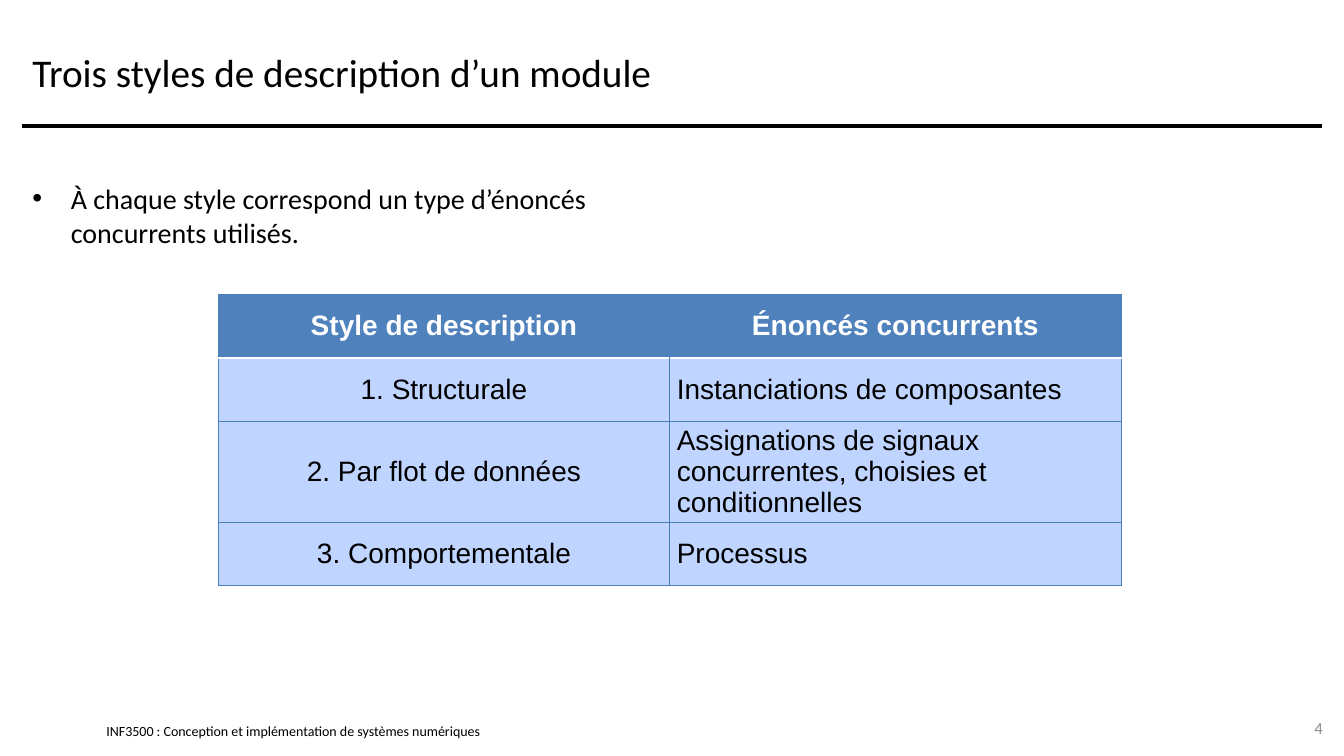
import dataclasses
import typing

import lxml.etree
import pptx
import pptx.dml.color
import pptx.enum.shapes
import pptx.enum.text
import pptx.oxml.ns
import pptx.slide
import pptx.table
import pptx.text.text
import pptx.util

ALIGN = pptx.enum.text.PP_ALIGN
MIDDLE = pptx.enum.text.MSO_ANCHOR.MIDDLE
TOP = pptx.enum.text.MSO_ANCHOR.TOP
WIDE = pptx.util.Inches(13.33)
HIGH = pptx.util.Inches(7.5)
PARTS = 12  # columns and rows of the slide grid


@dataclasses.dataclass(frozen=True)
class Theme:
    ink: str = "000000"
    paper: str = "FFFFFF"
    grey: str = "8C8C8C"
    head: str = "4F81BD"
    body: str = "BFD4FF"
    edge: str = "4B7EBC"
    text: str = "Calibri"
    grid: str = "Arial"
    large: int = 28
    main: int = 20
    small: int = 12
    tiny: int = 10


class Box(typing.NamedTuple):
    """A place on the slide, in grid columns and rows."""
    col: float
    row: float
    cols: float
    rows: float


class Label(typing.NamedTuple):
    text: str
    box: Box
    size: int
    color: str
    align: ALIGN
    inset: float


THEME = Theme()
TITLE = Box(0.2, 0.27, 11.6, 1.73)
BODY = Box(0.2, 2.8, 5.7, 8.13)
TABLE = Box(1.95, 4.67, 8.06, 4.04)
LABELS = [
    Label("INF3500 : Conception et implémentation de systèmes numériques",
          Box(0.95, 11.47, 4.6, 0.27), THEME.tiny, THEME.ink, ALIGN.LEFT, 0),
    Label("4", Box(11.3, 11.23, 0.6, 0.64), THEME.small, THEME.grey,
          ALIGN.RIGHT, 0.1),
]
STYLES = [
    ("Style de description", "Énoncés concurrents"),
    ("1. Structurale", "Instanciations de composantes"),
    ("2. Par flot de données",
     "Assignations de signaux concurrentes, choisies et conditionnelles"),
    ("3. Comportementale", "Processus"),
]


def across(cols: float) -> int:
    return round(WIDE * cols / PARTS)


def down(rows: float) -> int:
    return round(HIGH * rows / PARTS)


def place(box: Box) -> tuple[int, int, int, int]:
    return across(box.col), down(box.row), across(box.cols), down(box.rows)


def rgb(color: str) -> pptx.dml.color.RGBColor:
    return pptx.dml.color.RGBColor.from_string(color)


def write(frame: pptx.text.text.TextFrame, text: str, *, size: int,
          color: str = THEME.ink, font: str = THEME.text, bold: bool = False,
          align: ALIGN = ALIGN.LEFT, anchor: MIDDLE = MIDDLE,
          bullet: str = "") -> None:
    frame.word_wrap = True
    frame.vertical_anchor = anchor
    para = frame.paragraphs[0]
    para.text = text
    para.alignment = align
    para.space_before = pptx.util.Pt(0)
    if bullet:
        props = para._p.get_or_add_pPr()
        indent = pptx.util.Inches(0.38)
        props.set("marL", str(indent))
        props.set("indent", str(-indent))
        mark = lxml.etree.SubElement(props, pptx.oxml.ns.qn("a:buChar"))
        mark.set("char", bullet)
    para.font.name = font
    para.font.size = pptx.util.Pt(size)
    para.font.bold = bold
    para.font.color.rgb = rgb(color)


def fill_holder(slide: pptx.slide.Slide, index: int, box: Box, text: str,
                **style: typing.Any) -> None:
    holder = slide.placeholders[index]
    holder.left, holder.top, holder.width, holder.height = place(box)
    holder.text_frame.auto_size = pptx.enum.text.MSO_AUTO_SIZE.NONE
    write(holder.text_frame, text, **style)


def add_label(slide: pptx.slide.Slide, label: Label) -> None:
    frame = slide.shapes.add_textbox(*place(label.box)).text_frame
    frame.margin_left = frame.margin_right = pptx.util.Inches(label.inset)
    frame.margin_top = frame.margin_bottom = pptx.util.Inches(label.inset / 2)
    write(frame, label.text, size=label.size, color=label.color,
          align=label.align)


def add_rule(slide: pptx.slide.Slide) -> None:
    left, top, width, height = place(TITLE)
    base = top + height
    rule = slide.shapes.add_connector(
        pptx.enum.shapes.MSO_CONNECTOR.STRAIGHT, left, base, left + width, base)
    rule.line.color.rgb = rgb(THEME.ink)
    rule.line.width = pptx.util.Pt(3)
    lxml.etree.SubElement(rule._element.spPr, pptx.oxml.ns.qn("a:effectLst"))


def add_edge(cell: pptx.table._Cell, side: str, color: str,
             width: float) -> None:
    qname = pptx.oxml.ns.qn
    props = cell._tc.get_or_add_tcPr()
    line = lxml.etree.SubElement(props, qname("a:ln" + side),
                                 w=str(pptx.util.Pt(width)))
    if color:
        fill = lxml.etree.SubElement(line, qname("a:solidFill"))
        lxml.etree.SubElement(fill, qname("a:srgbClr"), val=color)
    else:
        lxml.etree.SubElement(line, qname("a:noFill"))


def edge_of(side: str, row: int, col: int) -> tuple[str, float]:
    """Colour and width of one side of a cell; no colour means no line."""
    if (row, side) in ((0, "B"), (1, "T")):
        return THEME.paper, 2
    if row == 0 and (col, side) in ((0, "R"), (1, "L")):
        return "", 0
    return THEME.edge, 0.75


def add_table(slide: pptx.slide.Slide) -> None:
    table = slide.shapes.add_table(len(STYLES), len(STYLES[0]),
                                   *place(TABLE)).table
    for row, texts in enumerate(STYLES):
        head = row == 0
        for col, text in enumerate(texts):
            cell = table.cell(row, col)
            for side in "LRTB":
                add_edge(cell, side, *edge_of(side, row, col))
            cell.fill.solid()
            cell.fill.fore_color.rgb = rgb(THEME.head if head else THEME.body)
            cell.vertical_anchor = MIDDLE
            cell.margin_left = cell.margin_right = pptx.util.Inches(0.07)
            cell.margin_top = cell.margin_bottom = 0
            write(cell.text_frame, text, size=THEME.main, font=THEME.grid,
                  color=THEME.paper if head else THEME.ink, bold=head,
                  align=ALIGN.CENTER if head or col == 0 else ALIGN.LEFT)


def main() -> None:
    deck = pptx.Presentation()
    deck.slide_width, deck.slide_height = WIDE, HIGH
    slide = deck.slides.add_slide(deck.slide_layouts[1])
    add_rule(slide)
    fill_holder(slide, 0, TITLE, "Trois styles de description d’un module",
                size=THEME.large)
    fill_holder(slide, 1, BODY,
                "À chaque style correspond un type d’énoncés "
                "concurrents utilisés.",
                size=THEME.main, anchor=TOP, bullet="•")
    for label in LABELS:
        add_label(slide, label)
    add_table(slide)
    deck.save("out.pptx")


if __name__ == "__main__":
    main()
